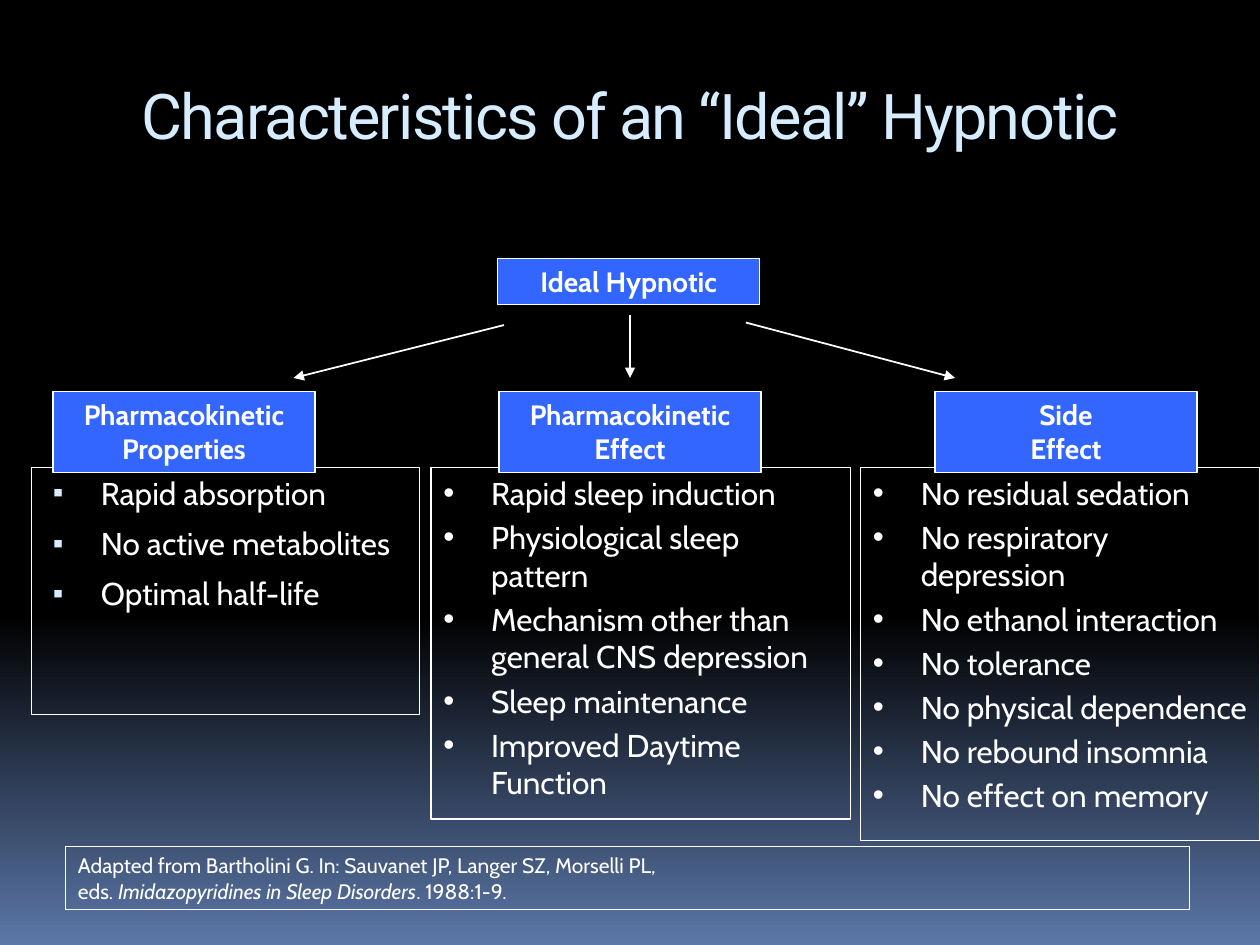
from pptx import Presentation
from pptx.dml.color import RGBColor as RGB
from pptx.enum.shapes import MSO_CONNECTOR as Conn, MSO_SHAPE as Shape
from pptx.enum.text import MSO_ANCHOR as Anchor, MSO_AUTO_SIZE as Fit, PP_ALIGN as Align
from pptx.oxml.ns import qn
from pptx.util import Inches, Pt
from lxml.etree import SubElement as Sub

THEME = {
    "head": "Roboto", "body": "Cabin",
    "white": "FFFFFF", "pale": "D6ECFF", "blue": "3366FF",
    "dark": "000000", "glow": "5B77A8",
    "title": 36, "list": 18, "label": 16, "note": 12, "line": 0.75,
}
TITLE = "Characteristics of an “Ideal” Hypnotic"
ROOT = (["Ideal Hypnotic"], 3.95)
COLS = [
    {"label": ["Pharmacokinetic", "Properties"], "x": 0.42, "box": (0.25, 3.08, 1.96),
     "items": ["Rapid absorption", "No active metabolites", "Optimal half-life"]},
    {"label": ["Pharmacokinetic", "Effect"], "x": 3.96, "box": (3.42, 3.33, 2.79),
     "items": ["Rapid sleep induction", "Physiological sleep pattern",
               "Mechanism other than general CNS depression",
               "Sleep maintenance", "Improved Daytime Function"]},
    {"label": ["Side", "Effect"], "x": 7.42, "box": (6.83, 3.17, 2.96),
     "items": ["No residual sedation", "No respiratory depression",
               "No ethanol interaction", "No tolerance", "No physical dependence",
               "No rebound insomnia", "No effect on memory"]},
]
NOTE = [
    [("Adapted from Bartholini G. In: Sauvanet JP, Langer SZ, Morselli PL, ", False)],
    [("eds. ", False), ("Imidazopyridines in Sleep Disorders", True), (". 1988:1-9.", False)],
]
ARROWS = [(4, 2.58, 2.33, 3, 1), (5.92, 2.56, 7.58, 3, 1), (5, 2.5, 5, 3, 0.75)]
LIST_TOP, LABEL_TOP, LABEL_W = 3.71, 3.11, 2.08


def tint(name):
    return RGB.from_string(THEME[name])


def place(shape, x, y, w, h):
    shape.left, shape.top, shape.width, shape.height = map(Inches, (x, y, w, h))


def write(para, text, size, color="white", face="body", bold=False, slant=False):
    run = para.add_run()
    run.text = text
    font = run.font
    font.name, font.size = THEME[face], Pt(THEME[size])
    font.bold, font.italic = bold, slant
    font.color.rgb = tint(color)
    return run


def edge(line, width=THEME["line"]):
    line.color.rgb = tint("white")
    line.width = Pt(width)


def frame(slide, x, y, w, h, fill=None):
    box = slide.shapes.add_shape(Shape.RECTANGLE, *map(Inches, (x, y, w, h)))
    box.shadow.inherit = False
    if fill:
        box.fill.solid()
        box.fill.fore_color.rgb = tint(fill)
    else:
        box.fill.background()
    edge(box.line)
    text = box.text_frame
    text.word_wrap, text.vertical_anchor = True, Anchor.TOP
    text.paragraphs[0].alignment = Align.LEFT
    return box


def label(slide, lines, x, y, h):
    para = frame(slide, x, y, LABEL_W, h, "blue").text_frame.paragraphs[0]
    para.alignment = Align.CENTER
    for i, line in enumerate(lines):
        if i:
            para.add_line_break()
        write(para, line, "label", bold=True)


def bullets(box, items, mark, indent, gap, color=None):
    text = box.text_frame
    text.auto_size, text.vertical_anchor = Fit.NONE, Anchor.TOP
    for i, item in enumerate(items):
        para = text.add_paragraph() if i else text.paragraphs[0]
        para.alignment, para.space_before = Align.LEFT, Pt(gap)
        props = para._p.get_or_add_pPr()
        props.set("marL", str(Inches(indent)))
        props.set("indent", str(Inches(-0.38)))
        if color:
            Sub(Sub(props, qn("a:buClr")), qn("a:srgbClr"), val=THEME[color])
            Sub(props, qn("a:buSzPct"), val="95000")
        Sub(props, qn("a:buFont"), typeface="Arial")
        Sub(props, qn("a:buChar"), char=mark)
        write(para, item, "list")


def arrow(slide, x1, y1, x2, y2, width):
    link = slide.shapes.add_connector(Conn.STRAIGHT, *map(Inches, (x1, y1, x2, y2)))
    edge(link.line, width)
    Sub(link.line._get_or_add_ln(), qn("a:tailEnd"), type="triangle")
    Sub(link._element.spPr, qn("a:effectLst"))


def main():
    deck = Presentation()
    deck.slide_width, deck.slide_height = Inches(10), Inches(7.5)
    slide = deck.slides.add_slide(deck.slide_layouts[1])

    back = slide.background.fill
    back.gradient()
    back.gradient_angle = 270
    for stop, spot, name in zip(back.gradient_stops, (0.65, 1), ("dark", "glow")):
        stop.position, stop.color.rgb = spot, tint(name)

    title = slide.shapes.title
    place(title, 0.5, 0.56, 9, 1)
    title.text_frame.vertical_anchor = Anchor.TOP
    para = title.text_frame.paragraphs[0]
    para.alignment = Align.CENTER
    run = write(para, TITLE, "title", "pale", "head")
    run.font._element.set("spc", "-100")

    for i, col in enumerate(COLS):
        x, w, h = col["box"]
        if i:
            bullets(frame(slide, x, LIST_TOP, w, h), col["items"], "•", 0.38, 3.6)
        else:
            body = slide.placeholders[1]
            place(body, x, LIST_TOP, w, h)
            edge(body.line)
            bullets(body, col["items"], "▪", 0.45, 7, "pale")

    for ends in ARROWS:
        arrow(slide, *ends)
    label(slide, *ROOT, 2.05, 0.37)
    for col in COLS:
        label(slide, col["label"], col["x"], LABEL_TOP, 0.64)

    para = frame(slide, 0.52, 6.72, 8.92, 0.5).text_frame.paragraphs[0]
    for i, line in enumerate(NOTE):
        if i:
            para.add_line_break()
        for words, slant in line:
            write(para, words, "note", slant=slant)

    deck.save("out.pptx")


if __name__ == "__main__":
    main()
